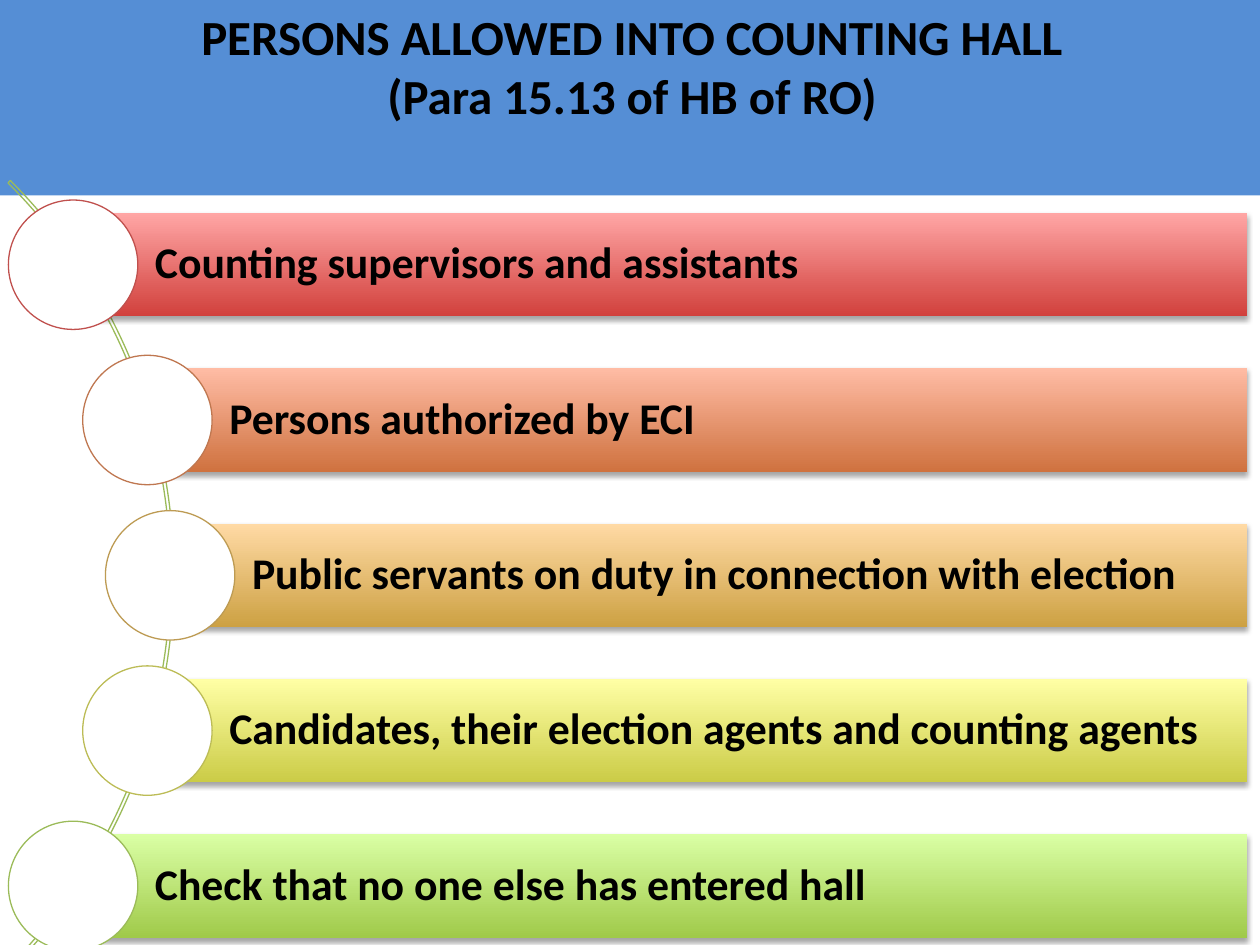
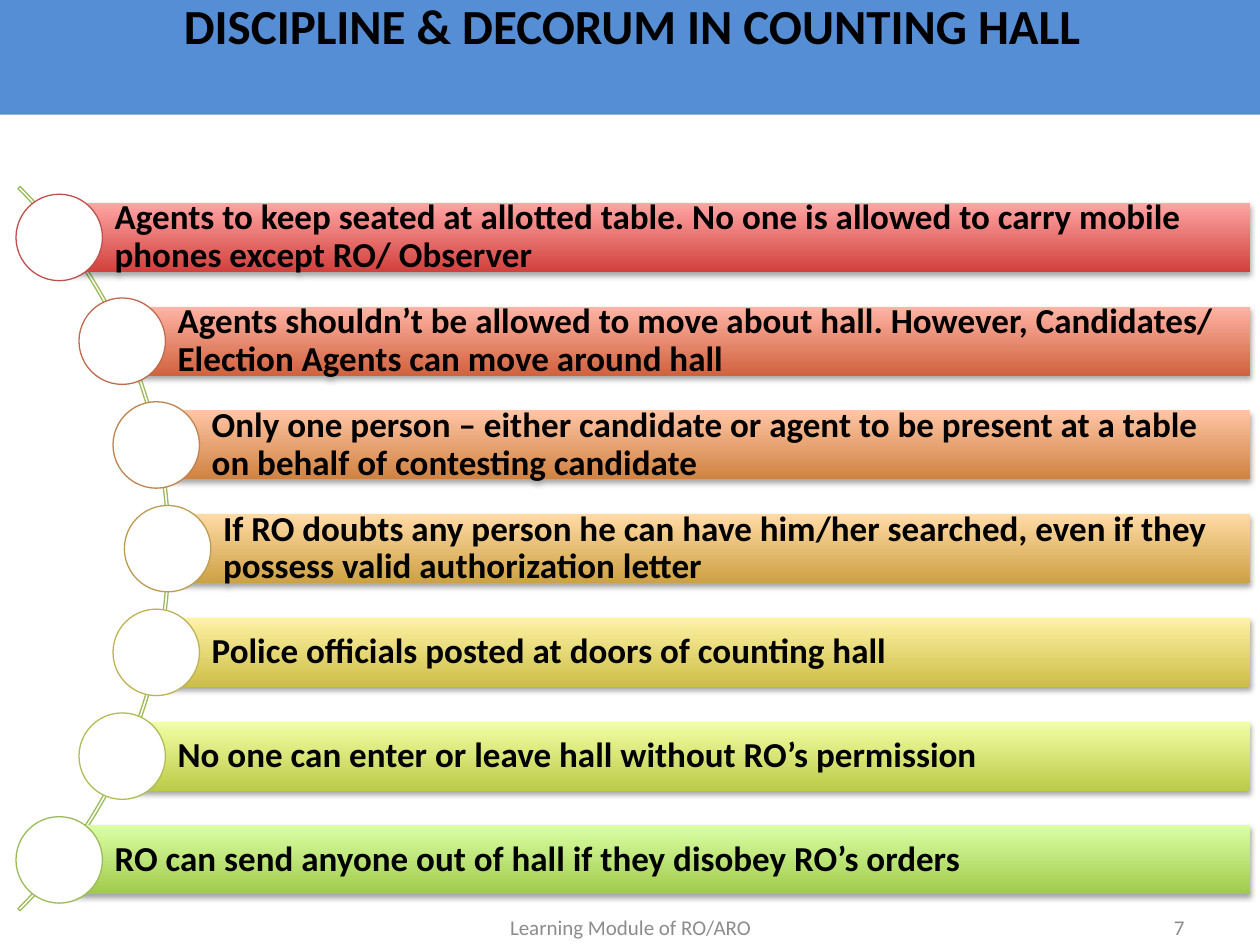
import lxml.etree
import pptx
import pptx.dml.color
import pptx.enum.shapes
import pptx.enum.text
import pptx.oxml.ns
import pptx.util

RGBColor = pptx.dml.color.RGBColor
ShapeType = pptx.enum.shapes.MSO_SHAPE
Align = pptx.enum.text.PP_ALIGN

FONT = "Calibri"
BLACK = RGBColor(0x00, 0x00, 0x00)
WHITE = RGBColor(0xFF, 0xFF, 0xFF)
BAND_BLUE = RGBColor(0x55, 0x8E, 0xD5)
FOOTER_GREY = RGBColor(0x8C, 0x8C, 0x8C)
ARC_GREEN = RGBColor(0x9B, 0xBB, 0x59)

RED = (RGBColor(0xD1, 0x40, 0x3C), RGBColor(0xFF, 0xA6, 0xA5), RGBColor(0xC0, 0x50, 0x4D))
VERMILION = (RGBColor(0xD0, 0x62, 0x3E), RGBColor(0xFF, 0xB4, 0xA5), RGBColor(0xBF, 0x6A, 0x4F))
ORANGE = (RGBColor(0xCF, 0x72, 0x3F), RGBColor(0xFF, 0xBC, 0xA5), RGBColor(0xBF, 0x77, 0x50))
AMBER = (RGBColor(0xCF, 0x82, 0x41), RGBColor(0xFF, 0xC5, 0xA5), RGBColor(0xBE, 0x83, 0x51))
OCHRE = (RGBColor(0xCD, 0xA1, 0x43), RGBColor(0xFF, 0xDA, 0xA5), RGBColor(0xBD, 0x9B, 0x53))
GOLD = (RGBColor(0xCC, 0xBE, 0x46), RGBColor(0xFF, 0xF2, 0xA5), RGBColor(0xBD, 0xB2, 0x55))
YELLOW = (RGBColor(0xCB, 0xCC, 0x47), RGBColor(0xFF, 0xFF, 0xA5), RGBColor(0xBC, 0xBC, 0x56))
LIME = (RGBColor(0xBD, 0xCB, 0x48), RGBColor(0xF2, 0xFF, 0xA5), RGBColor(0xB1, 0xBC, 0x57))
GREEN = (RGBColor(0xA0, 0xCA, 0x4A), RGBColor(0xDA, 0xFF, 0xA5), ARC_GREEN)

presentation = pptx.Presentation()
presentation.slide_width = pptx.util.Inches(10)
presentation.slide_height = pptx.util.Inches(7.5)
COLUMN = presentation.slide_width / 100
ROW = presentation.slide_height / 75


def add_plain_shape(slide, kind, left, top, width, height, fill=None, line=None):
    shape = slide.shapes.add_shape(
        kind, int(left * COLUMN), int(top * ROW), int(width * COLUMN), int(height * ROW)
    )
    shape.shadow.inherit = False
    if fill is None:
        shape.fill.background()
    else:
        shape.fill.solid()
        shape.fill.fore_color.rgb = fill
    if line is None:
        shape.line.fill.background()
    else:
        shape.line.color.rgb = line
        shape.line.width = pptx.util.Pt(0.75)
    return shape


def write_text(shape, lines, size, color, bold, alignment, insets):
    frame = shape.text_frame
    frame.word_wrap = True
    frame.vertical_anchor = pptx.enum.text.MSO_ANCHOR.MIDDLE
    frame.margin_left, frame.margin_top, frame.margin_right, frame.margin_bottom = [
        int(inset * COLUMN) for inset in insets
    ]
    paragraph = frame.paragraphs[0]
    paragraph.alignment = alignment
    for index, line in enumerate(lines):
        if index:
            paragraph.add_line_break()
        run = paragraph.add_run()
        run.text = line
        run.font.name = FONT
        run.font.size = pptx.util.Pt(size)
        run.font.bold = bold
        run.font.color.rgb = color
    return paragraph


slides = [
    {
        "title": ["PERSONS ALLOWED INTO COUNTING HALL", "(Para 15.13 of HB of RO)"],
        "title_height": 15.9,
        "footers": [],
        "arc_left": -74.8,
        "arc_size": 88.6,
        "first_top": 16.9,
        "last_top": 66.2,
        "bar_lefts": [5.8, 11.7, 13.5, 11.7, 5.8],
        "bar_right": 99,
        "text_size": 25,
        "insets": (6.5, 0.7, 0.7, 0.7),
        "bars": [
            ("Counting supervisors and assistants", RED),
            ("Persons authorized by ECI", ORANGE),
            ("Public servants on duty in connection with election", OCHRE),
            ("Candidates, their election agents and counting agents", YELLOW),
            ("Check that no one else has entered hall", GREEN),
        ],
    },
    {
        "title": ["DISCIPLINE & DECORUM IN COUNTING HALL"],
        "title_height": 9.5,
        "footers": [
            ("Learning Module of RO/ARO", 34.2, 31.7, Align.CENTER),
            ("7", 71.7, 23.3, Align.RIGHT),
        ],
        "arc_left": -67.8,
        "arc_size": 81.3,
        "first_top": 16.1,
        "last_top": 65.5,
        "bar_lefts": [4.7, 9.7, 12.4, 13.3, 12.4, 9.7, 4.7],
        "bar_right": 99.2,
        "text_size": 20,
        "insets": (4.4, 0.6, 0.6, 0.6),
        "bars": [
            ("Agents to keep seated at allotted table. No one is allowed to carry mobile phones except RO/ Observer", RED),
            ("Agents shouldn’t be allowed to move about hall. However, Candidates/ Election Agents can move around hall", VERMILION),
            ("Only one person – either candidate or agent to be present at a table on behalf of contesting candidate", AMBER),
            ("If RO doubts any person he can have him/her searched, even if they possess valid authorization letter", OCHRE),
            ("Police officials posted at doors of counting hall", GOLD),
            ("No one can enter or leave hall without RO’s permission", LIME),
            ("RO can send anyone out of hall if they disobey RO’s orders", GREEN),
        ],
    },
]

for content in slides:
    slide = presentation.slides.add_slide(presentation.slide_layouts[6])

    title_band = add_plain_shape(
        slide, ShapeType.RECTANGLE, 0, -0.4, 100.3, content["title_height"], BAND_BLUE
    )
    write_text(title_band, content["title"], 28, BLACK, True, Align.CENTER, (1, 0, 1, 4.7))

    for text, left, width, alignment in content["footers"]:
        footer = slide.shapes.add_textbox(
            int(left * COLUMN), int(71.6 * ROW), int(width * COLUMN), int(4 * ROW)
        )
        write_text(footer, [text], 12, FOOTER_GREY, False, alignment, (1, 0.5, 1, 0.5))

    pitch = (content["last_top"] - content["first_top"]) / (len(content["bars"]) - 1)
    bar_height = pitch * 2 / 3
    circle_size = bar_height * 1.25
    arc_size = content["arc_size"]
    arc_middle = (content["first_top"] + content["last_top"] + bar_height) / 2
    arc = add_plain_shape(
        slide, ShapeType.BLOCK_ARC, content["arc_left"], arc_middle - arc_size / 2,
        arc_size, arc_size, line=ARC_GREEN,
    )
    arc.adjustments[0] = 189
    arc.adjustments[1] = 27
    arc.adjustments[2] = 0.3 / 100

    for index, (text, (dark, light, outline)) in enumerate(content["bars"]):
        left = content["bar_lefts"][index]
        top = content["first_top"] + index * pitch
        bar = add_plain_shape(
            slide, ShapeType.RECTANGLE, left, top, content["bar_right"] - left, bar_height
        )
        bar.fill.gradient()
        bar.fill.gradient_angle = 90
        for stop, color in zip(bar.fill.gradient_stops, (dark, light)):
            stop.color.rgb = color
        effects = bar.element.spPr.find(pptx.oxml.ns.qn("a:effectLst"))
        shadow = lxml.etree.SubElement(
            effects, pptx.oxml.ns.qn("a:outerShdw"), blurRad=str(pptx.util.Pt(3.1)),
            dist=str(pptx.util.Pt(1.8)), dir="5400000", rotWithShape="0",
        )
        shadow_color = lxml.etree.SubElement(shadow, pptx.oxml.ns.qn("a:srgbClr"), val=str(BLACK))
        lxml.etree.SubElement(shadow_color, pptx.oxml.ns.qn("a:alpha"), val="35000")
        paragraph = write_text(
            bar, [text], content["text_size"], BLACK, True, Align.LEFT, content["insets"]
        )
        paragraph.line_spacing = 0.9

        add_plain_shape(
            slide, ShapeType.OVAL, left - circle_size / 2, top + (bar_height - circle_size) / 2,
            circle_size, circle_size, WHITE, outline,
        )

presentation.save("out.pptx")
